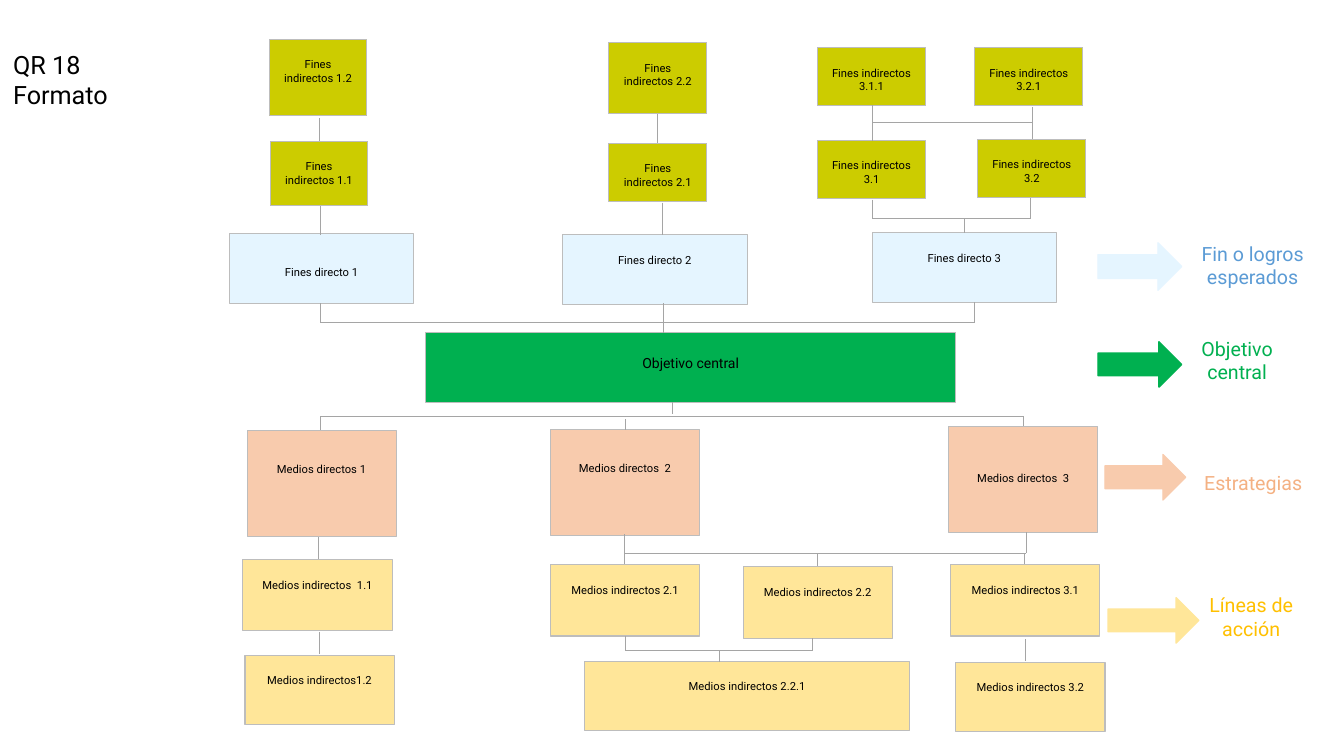
from pptx import Presentation
from pptx.dml.color import RGBColor
from pptx.enum.shapes import MSO_CONNECTOR, MSO_SHAPE
from pptx.enum.text import MSO_ANCHOR, PP_ALIGN
from pptx.oxml.ns import qn
from pptx.util import Inches, Pt
from lxml import etree

BLACK = RGBColor(0x00, 0x00, 0x00)
WHITE = RGBColor(0xFF, 0xFF, 0xFF)
OLIVE = RGBColor(0xCC, 0xCC, 0x00)
PALE_BLUE = RGBColor(0xE5, 0xF5, 0xFF)
BLUE = RGBColor(0x5B, 0x9B, 0xD5)
GREEN = RGBColor(0x00, 0xB0, 0x50)
PEACH = RGBColor(0xF8, 0xCB, 0xAD)
ORANGE = RGBColor(0xF4, 0xB1, 0x83)
CREAM = RGBColor(0xFF, 0xE6, 0x99)
AMBER = RGBColor(0xFF, 0xC0, 0x00)
BORDER_GRAY = RGBColor(0xBD, 0xBD, 0xBD)
LINE_GRAY = RGBColor(0xA5, 0xA5, 0xA5)

TITLE = "QR 18\vFormato"

# (fill, font size, boxes); a box is text, left, top, width, height, lines of offset above the text
LEVELS = [
    (OLIVE, 8, [
        ("Fines indirectos 1.2", 2.67, 0.39, 0.97, 0.76, 1),
        ("Fines indirectos 2.2", 6.04, 0.42, 0.97, 0.71, 1),
        ("Fines indirectos 1.1", 2.68, 1.4, 0.97, 0.64, 1),
        ("Fines indirectos 2.1", 6.04, 1.42, 0.97, 0.58, 1),
        ("Fines indirectos 3.1.1", 8.11, 0.47, 1.07, 0.58, 1),
        ("Fines indirectos 3.2.1", 9.67, 0.47, 1.07, 0.58, 1),
        ("Fines indirectos 3.1", 8.11, 1.39, 1.07, 0.58, 1),
        ("Fines indirectos 3.2", 9.7, 1.38, 1.07, 0.58, 1),
    ]),
    (PALE_BLUE, 8, [
        ("Fines directo 1", 2.28, 2.32, 1.82, 0.69, 2),
        ("Fines directo 2", 5.58, 2.33, 1.83, 0.69, 1),
        ("Fines directo 3", 8.65, 2.31, 1.83, 0.69, 1),
    ]),
    (GREEN, 10, [("Objetivo central", 4.22, 3.3, 5.26, 0.69, 1)]),
    (PEACH, 8, [
        ("Medios directos 1", 2.45, 4.27, 1.48, 1.05, 2),
        ("Medios directos  2", 5.46, 4.26, 1.48, 1.05, 2),
        ("Medios directos  3", 9.41, 4.23, 1.48, 1.05, 3),
    ]),
    (CREAM, 8, [
        ("Medios indirectos  1.1", 2.41, 5.55, 1.48, 0.71, 1),
        ("Medios indirectos1.2", 2.43, 6.5, 1.48, 0.69, 1),
        ("Medios indirectos 2.1", 5.46, 5.6, 1.48, 0.71, 1),
        ("Medios indirectos 2.2", 7.37, 5.62, 1.48, 0.71, 1),
        ("Medios indirectos 2.2.1", 5.8, 6.56, 3.22, 0.69, 1),
        ("Medios indirectos 3.1", 9.43, 5.6, 1.48, 0.71, 1),
        ("Medios indirectos 3.2", 9.48, 6.57, 1.48, 0.69, 1),
    ]),
]

# Horizontal bars: y, left, right
BARS = [
    (1.21, 8.65, 10.24), (2.17, 8.65, 10.22), (3.2, 3.18, 9.66),
    (4.13, 3.18, 10.15), (5.49, 6.19, 10.18), (6.45, 6.2, 8.06),
]

# Vertical stems: x, top, bottom
STEMS = [
    (3.17, 1.17, 1.4), (6.52, 1.13, 1.42), (8.65, 1.04, 1.4),
    (10.24, 1.06, 1.38), (3.18, 2.04, 2.33), (6.57, 2.01, 2.33),
    (8.65, 1.98, 2.17), (10.22, 1.96, 2.17), (9.56, 2.17, 2.31),
    (3.18, 3.01, 3.2), (6.58, 3.01, 3.3), (9.66, 3, 3.2),
    (6.67, 3.99, 4.11), (3.18, 4.13, 4.27), (6.2, 4.16, 4.27),
    (10.15, 4.13, 4.23), (3.16, 5.33, 5.55), (6.19, 5.3, 5.6),
    (8.11, 5.49, 5.62), (10.18, 5.28, 5.49), (10.16, 5.49, 5.6),
    (3.17, 6.27, 6.49), (10.17, 6.34, 6.56), (6.2, 6.31, 6.45),
    (8.06, 6.33, 6.45), (7.13, 6.45, 6.57),
]

# Text, text colour, label position, arrow colour, arrow position
LEGEND = [
    ("Objetivo central", GREEN, (11.53, 3.25, 1.48, 0.65), GREEN, (10.89, 3.39, 0.83, 0.45)),
    ("Estrategias", ORANGE, (11.69, 4.46, 1.48, 0.65), PEACH, (10.96, 4.51, 0.8, 0.45)),
    ("Líneas de acción", AMBER, (11.67, 5.79, 1.48, 0.65), CREAM, (10.99, 5.93, 0.9, 0.45)),
    ("Fin o logros esperados", BLUE, (11.51, 2.21, 1.83, 0.84),
     PALE_BLUE, (10.89, 2.41, 0.83, 0.47)),
]


def write_text(shape, text, size, color, alignment, anchor, top_margin=0.05):
    frame = shape.text_frame
    frame.text = text
    frame_format = {
        "word_wrap": True, "vertical_anchor": anchor,
        "margin_left": Inches(0.1), "margin_right": Inches(0.1),
        "margin_top": Inches(top_margin), "margin_bottom": Inches(0.05),
    }
    for name, value in frame_format.items():
        setattr(frame, name, value)
    paragraph = frame.paragraphs[0]
    paragraph.alignment = alignment
    paragraph.line_spacing = 1.0
    for run in paragraph.runs:
        run.font.name = "Roboto"
        run.font.size = Pt(size)
        run.font.color.rgb = color


def add_filled_shape(slide, kind, position, fill, border=None, border_width=0.75):
    shape = slide.shapes.add_shape(kind, *(Inches(value) for value in position))
    shape.shadow.inherit = False
    shape.fill.solid()
    shape.fill.fore_color.rgb = fill
    if border is None:
        shape.line.fill.background()
    else:
        shape.line.color.rgb = border
        shape.line.width = Pt(border_width)
    return shape


def add_line(slide, *ends):
    line = slide.shapes.add_connector(MSO_CONNECTOR.STRAIGHT, *(Inches(value) for value in ends))
    line.line.color.rgb = LINE_GRAY
    line.line.width = Pt(0.5)
    etree.SubElement(line._element.spPr, qn("a:effectLst"))


def main():
    presentation = Presentation()
    presentation.slide_width = Inches(13.33)
    presentation.slide_height = Inches(7.5)
    slide = presentation.slides.add_slide(presentation.slide_layouts[5])

    title = slide.shapes.title
    title.left, title.top, title.width, title.height = (
        Inches(value) for value in (0.03, 0.44, 1.86, 0.71))
    write_text(title, TITLE, 18, BLACK, PP_ALIGN.LEFT, MSO_ANCHOR.TOP)

    for fill, size, boxes in LEVELS:
        for text, left, top, width, height, offset_lines in boxes:
            box = add_filled_shape(slide, MSO_SHAPE.RECTANGLE, (left, top, width, height),
                                   fill, BORDER_GRAY)
            write_text(box, text, size, BLACK, PP_ALIGN.CENTER, MSO_ANCHOR.TOP,
                       0.05 + offset_lines * size * 1.2 / 72)

    for y, left, right in BARS:
        add_line(slide, left, y, right, y)
    for x, top, bottom in STEMS:
        add_line(slide, x, top, x, bottom)

    for text, color, label_position, arrow_color, arrow_position in LEGEND:
        label = add_filled_shape(slide, MSO_SHAPE.RECTANGLE, label_position, WHITE)
        write_text(label, text, 14, color, PP_ALIGN.CENTER, MSO_ANCHOR.MIDDLE)
        add_filled_shape(slide, MSO_SHAPE.RIGHT_ARROW, arrow_position, arrow_color, arrow_color, 1)

    presentation.save("out.pptx")


if __name__ == "__main__":
    main()
